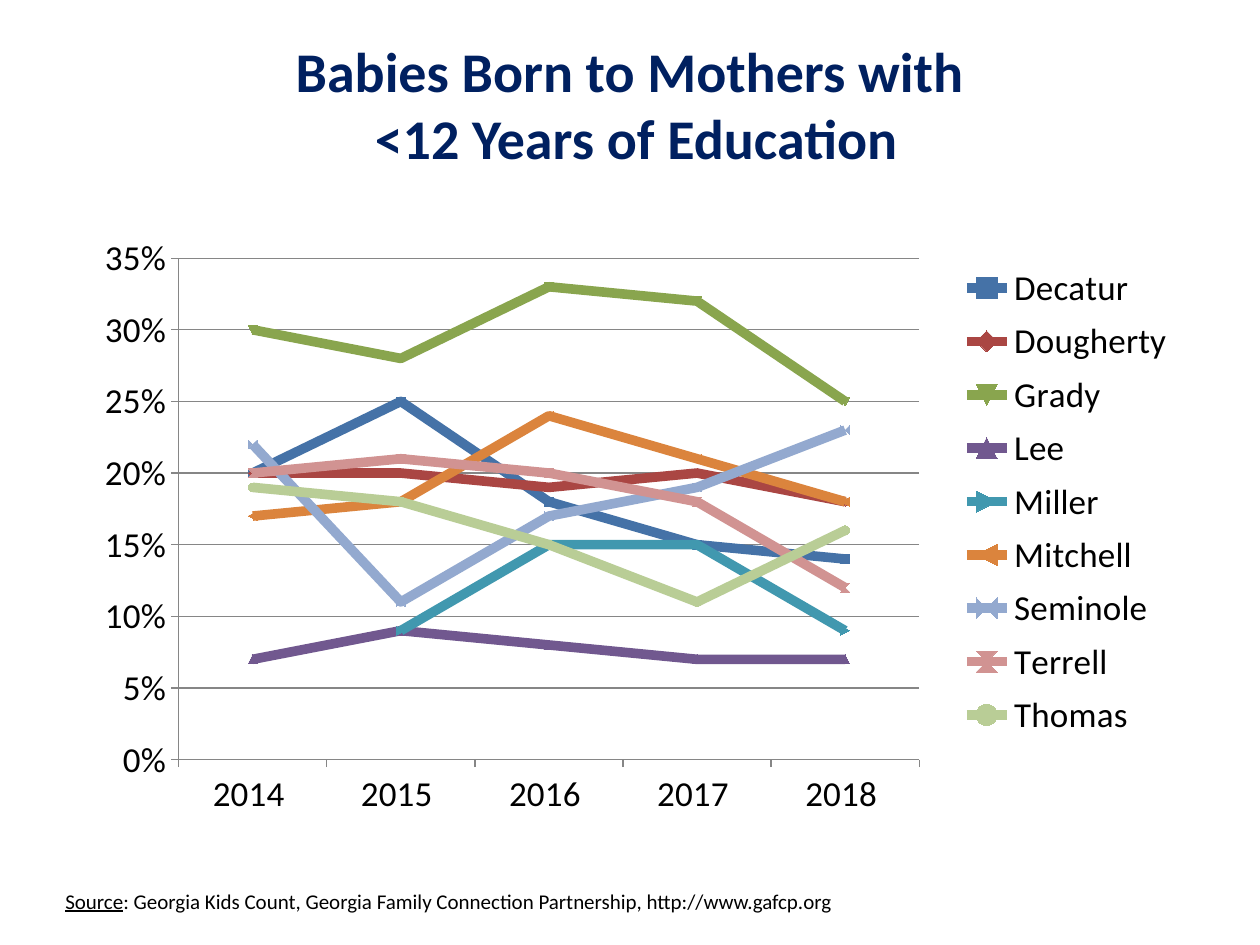
from dataclasses import dataclass

from lxml import etree
from pptx import Presentation
from pptx import util as u
from pptx.chart.data import CategoryChartData
from pptx.dml.color import RGBColor
from pptx.enum import chart as ch, text
from pptx.oxml.ns import qn

NAVY = RGBColor(0x00, 0x20, 0x60)
BLACK = RGBColor(0x00, 0x00, 0x00)
GRID_GREY = RGBColor(0x86, 0x86, 0x86)
FONT = "Calibri"
SLIDE_WIDTH, SLIDE_HEIGHT = u.Inches(10), u.Inches(7.5)


@dataclass(frozen=True)
class Area:
    """Left, top, width and height as shares of the surrounding frame."""
    x: float
    y: float
    w: float
    h: float

    def on_slide(self) -> tuple[int, int, int, int]:
        return (int(self.x * SLIDE_WIDTH), int(self.y * SLIDE_HEIGHT),
                int(self.w * SLIDE_WIDTH), int(self.h * SLIDE_HEIGHT))


@dataclass(frozen=True)
class County:
    name: str
    color: RGBColor
    shares: tuple


TITLE_AREA = Area(0.05, 0.2 / 7.5, 0.9, 1.25 / 7.5)
SOURCE_AREA = Area(0.042, 7 / 7.5, 0.917, 0.04)
CHART_AREA = Area(0.075, 1.75 / 7.5, 0.867, 4.75 / 7.5)
PLOT_AREA = Area(0.077, 0.063, 0.678, 0.838)
LEGEND_AREA = Area(0.79, 0.06, 0.2, 0.82)

YEARS = ["2014 ", "2015 ", "2016 ", "2017 ", "2018 "]
COUNTIES = [
    County("Decatur", RGBColor(0x45, 0x72, 0xA7), (0.2, 0.25, 0.18, 0.15, 0.14)),
    County("Dougherty", RGBColor(0xAA, 0x46, 0x43), (0.2, 0.2, 0.19, 0.2, 0.18)),
    County("Grady", RGBColor(0x89, 0xA5, 0x4E), (0.3, 0.28, 0.33, 0.32, 0.25)),
    County("Lee", RGBColor(0x71, 0x58, 0x8F), (0.07, 0.09, 0.08, 0.07, 0.07)),
    County("Miller", RGBColor(0x41, 0x98, 0xAF), (None, 0.09, 0.15, 0.15, 0.09)),
    County("Mitchell", RGBColor(0xDB, 0x84, 0x3D), (0.17, 0.18, 0.24, 0.21, 0.18)),
    County("Seminole", RGBColor(0x93, 0xA9, 0xCF), (0.22, 0.11, 0.17, 0.19, 0.23)),
    County("Terrell", RGBColor(0xD1, 0x93, 0x92), (0.2, 0.21, 0.2, 0.18, 0.12)),
    County("Thomas", RGBColor(0xB9, 0xCD, 0x96), (0.19, 0.18, 0.15, 0.11, 0.16)),
]


def set_font(font, color: RGBColor, **values) -> None:
    for attribute, value in {"name": FONT, **values}.items():
        setattr(font, attribute, value)
    font.color.rgb = color


def add_text_frame(slide, area: Area, anchor):
    frame = slide.shapes.add_textbox(*area.on_slide()).text_frame
    frame.word_wrap = True
    frame.vertical_anchor = anchor
    return frame


def add_title(slide) -> None:
    frame = add_text_frame(slide, TITLE_AREA, text.MSO_ANCHOR.MIDDLE)
    heading = frame.paragraphs[0]
    heading.text = "Babies Born to Mothers with\v <12 Years of Education"
    heading.alignment = text.PP_ALIGN.CENTER
    for run in heading.runs:
        set_font(run.font, NAVY, size=u.Pt(32), bold=True)


def add_source(slide) -> None:
    frame = add_text_frame(slide, SOURCE_AREA, text.MSO_ANCHOR.TOP)
    frame.auto_size = text.MSO_AUTO_SIZE.SHAPE_TO_FIT_TEXT
    citation = (": Georgia Kids Count, Georgia Family Connection Partnership, "
                "http://www.gafcp.org")
    for words, underlined in (("Source", True), (citation, False)):
        run = frame.paragraphs[0].add_run()
        run.text = words
        set_font(run.font, BLACK, size=u.Pt(12), underline=underlined)


def set_layout(element, area: Area, before: tuple, inner: bool = False) -> None:
    """Fix the place of a chart part; the layout goes ahead of the named tags."""
    for old in element.findall(qn("c:layout")):
        element.remove(old)
    layout = etree.Element(qn("c:layout"))
    manual = etree.SubElement(layout, qn("c:manualLayout"))
    settings = {"layoutTarget": "inner"} if inner else {}
    settings |= {"xMode": "edge", "yMode": "edge",
                 "x": area.x, "y": area.y, "w": area.w, "h": area.h}
    for tag, value in settings.items():
        etree.SubElement(manual, qn(f"c:{tag}")).set("val", str(value))
    follower = next(child for child in element
                    if child.tag in [qn(tag) for tag in before])
    follower.addprevious(layout)


def set_line(line, color: RGBColor, points: float) -> None:
    line.color.rgb = color
    line.width = u.Pt(points)


def add_chart(slide) -> None:
    data = CategoryChartData(number_format="0%")
    data.categories = YEARS
    for county in COUNTIES:
        data.add_series(county.name, county.shares)
    chart = slide.shapes.add_chart(
        ch.XL_CHART_TYPE.LINE_MARKERS, *CHART_AREA.on_slide(), data).chart
    set_font(chart.font, BLACK, size=u.Pt(20))
    chart.has_title = False

    for series, county in zip(chart.plots[0].series, COUNTIES):
        series.smooth = False
        set_line(series.format.line, county.color, 5.5)
        series.marker.size = 5
        series.marker.format.fill.solid()
        series.marker.format.fill.fore_color.rgb = county.color
        set_line(series.marker.format.line, county.color, 0.75)
    chart.plots[0].vary_by_categories = False

    for axis in (chart.category_axis, chart.value_axis):
        axis.major_tick_mark = ch.XL_TICK_MARK.OUTSIDE
        axis.minor_tick_mark = ch.XL_TICK_MARK.NONE
        set_line(axis.format.line, GRID_GREY, 0.75)
    scale = {"minimum_scale": 0, "maximum_scale": 0.35, "major_unit": 0.05,
             "has_major_gridlines": True}
    for attribute, value in scale.items():
        setattr(chart.value_axis, attribute, value)
    set_line(chart.value_axis.major_gridlines.format.line, GRID_GREY, 0.75)
    labels = chart.value_axis.tick_labels
    labels.number_format = "0%"
    labels.number_format_is_linked = False

    chart.has_legend = True
    legend = chart.legend
    legend.position = ch.XL_LEGEND_POSITION.RIGHT
    legend.include_in_layout = False
    set_font(legend.font, BLACK, size=u.Pt(20))
    plot_area = chart.plots[0]._element.getparent()
    set_layout(plot_area, PLOT_AREA, ("c:lineChart",), inner=True)
    set_layout(legend._element, LEGEND_AREA, ("c:overlay", "c:txPr"))


def main() -> None:
    deck = Presentation()
    deck.slide_width, deck.slide_height = SLIDE_WIDTH, SLIDE_HEIGHT
    slide = deck.slides.add_slide(deck.slide_layouts[6])
    add_title(slide)
    add_source(slide)
    add_chart(slide)
    deck.save("out.pptx")


if __name__ == "__main__":
    main()
